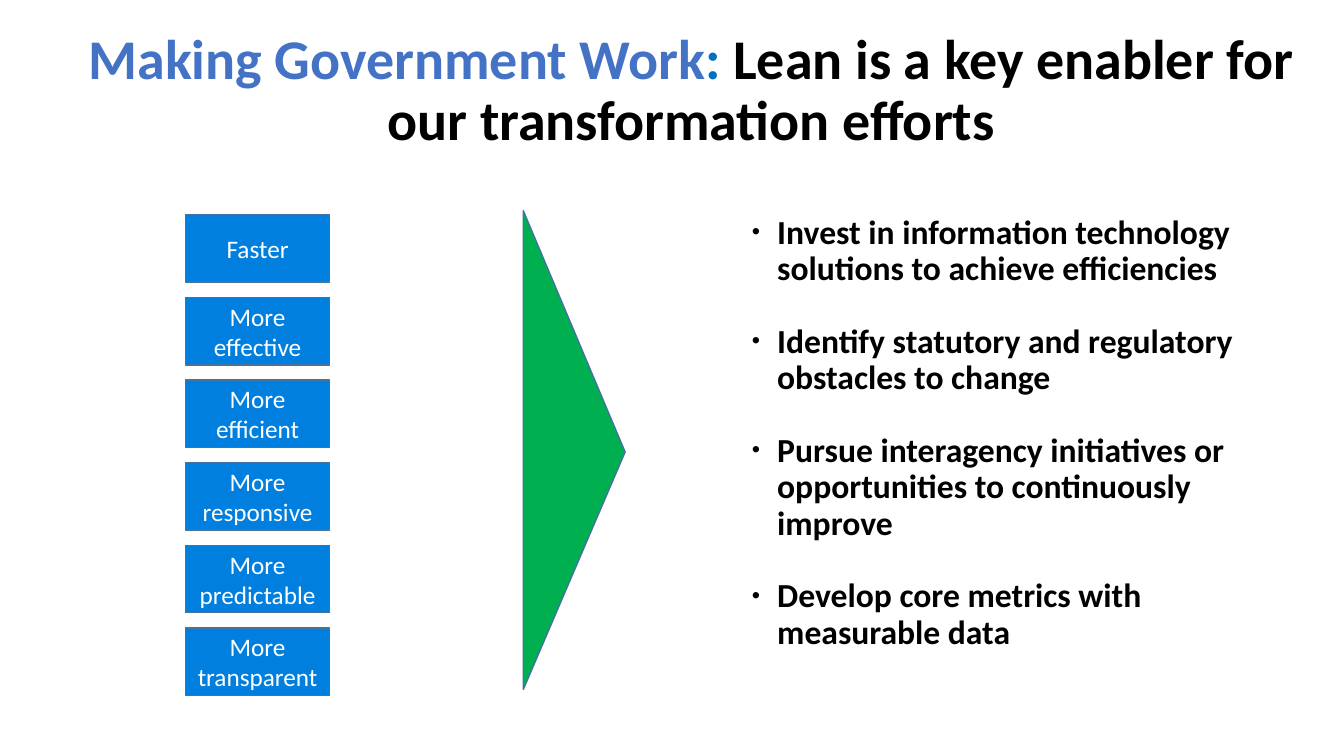
from pptx import Presentation
from pptx.dml.color import RGBColor
from pptx.enum.shapes import MSO_SHAPE as Shape
from pptx.enum.text import MSO_ANCHOR as Anchor, PP_ALIGN as Align
from pptx.oxml.ns import qn
from pptx.util import Inches, Pt
from lxml.etree import SubElement

GOALS = ["Faster", "More effective", "More efficient", "More responsive",
         "More predictable", "More transparent"]
ACTIONS = ["Invest in information technology solutions to achieve efficiencies",
           "Identify statutory and regulatory obstacles to change",
           "Pursue interagency initiatives or opportunities to continuously improve",
           "Develop core metrics with measurable data"]
TITLE = [("Making Government Work", "4472C4"), (": ", "0070C0"),
         ("Lean is a key enabler for our transformation efforts", "000000")]
GOAL_TOP, GOAL_PITCH = 2.13, 0.82


def color(value):
    """Return the colour of a hex string."""
    return RGBColor.from_string(value)


def apply(target, values):
    """Set each attribute of the target from a dict."""
    for name, value in values.items():
        setattr(target, name, value)


def add_span(para, text, size, ink, bold=False):
    """Add one formatted run to a paragraph."""
    span = para.add_run()
    span.text = text
    apply(span.font, {"name": "Calibri", "size": Pt(size), "bold": bold})
    span.font.color.rgb = color(ink)


def add_block(page, kind, place, fill):
    """Add a filled shape with a thin blue outline."""
    block = page.shapes.add_shape(kind, *map(Inches, place))
    block.shadow.inherit = False
    block.fill.solid()
    block.fill.fore_color.rgb = color(fill)
    block.line.color.rgb = color("43739E")
    block.line.width = Pt(1)
    return block


def add_goal(page, row, label):
    """Add one goal box on its row of the column."""
    box = add_block(page, Shape.RECTANGLE,
                    (1.84, GOAL_TOP + row * GOAL_PITCH, 1.43, 0.67), "007FDE")
    apply(box.text_frame, {"word_wrap": True, "vertical_anchor": Anchor.MIDDLE})
    para = box.text_frame.paragraphs[0]
    para.alignment = Align.CENTER
    add_span(para, label, 18, "FFFFFF")


def add_pointer(page):
    """Add the green triangle that points right."""
    pointer = add_block(page, Shape.ISOSCELES_TRIANGLE, (3.32, 3.96, 4.75, 1.01), "00B050")
    pointer.rotation = 90
    pointer.adjustments[0] = 0.504


def add_text(page, place, anchor):
    """Add an empty wrapping text box and return its frame."""
    frame = page.shapes.add_textbox(*map(Inches, place)).text_frame
    apply(frame, {"word_wrap": True, "vertical_anchor": anchor})
    return frame


def add_title(page):
    """Add the centred title in its three colours."""
    para = add_text(page, (0.75, 0.41, 12.21, 1), Anchor.MIDDLE).paragraphs[0]
    apply(para, {"alignment": Align.CENTER, "line_spacing": 0.9})
    for text, ink in TITLE:
        add_span(para, text, 40, ink, True)


def set_bullet(para):
    """Give a paragraph a small bullet with a hanging indent."""
    properties = para._p.get_or_add_pPr()
    properties.set("marL", str(Inches(0.75)))
    properties.set("indent", str(Inches(-0.25)))
    SubElement(properties, qn("a:buSzPct")).set("val", "70000")
    SubElement(properties, qn("a:buFont")).set("typeface", "Arial")
    SubElement(properties, qn("a:buChar")).set("char", "•")


def add_actions(page):
    """Add the bulleted list of actions."""
    frame = add_text(page, (6.86, 2.09, 5.61, 4.89), Anchor.TOP)
    for row, action in enumerate(ACTIONS):
        para = frame.add_paragraph() if row else frame.paragraphs[0]
        apply(para, {"line_spacing": 0.9, "space_before": Pt(26 if row else 0)})
        set_bullet(para)
        add_span(para, action, 24, "000000", True)


def main():
    """Build the slide and save it."""
    deck = Presentation()
    apply(deck, {"slide_width": Inches(13.33), "slide_height": Inches(7.5)})
    page = deck.slides.add_slide(deck.slide_layouts[6])
    add_title(page)
    for row, label in enumerate(GOALS):
        add_goal(page, row, label)
    add_pointer(page)
    add_actions(page)
    deck.save("out.pptx")


if __name__ == "__main__":
    main()
